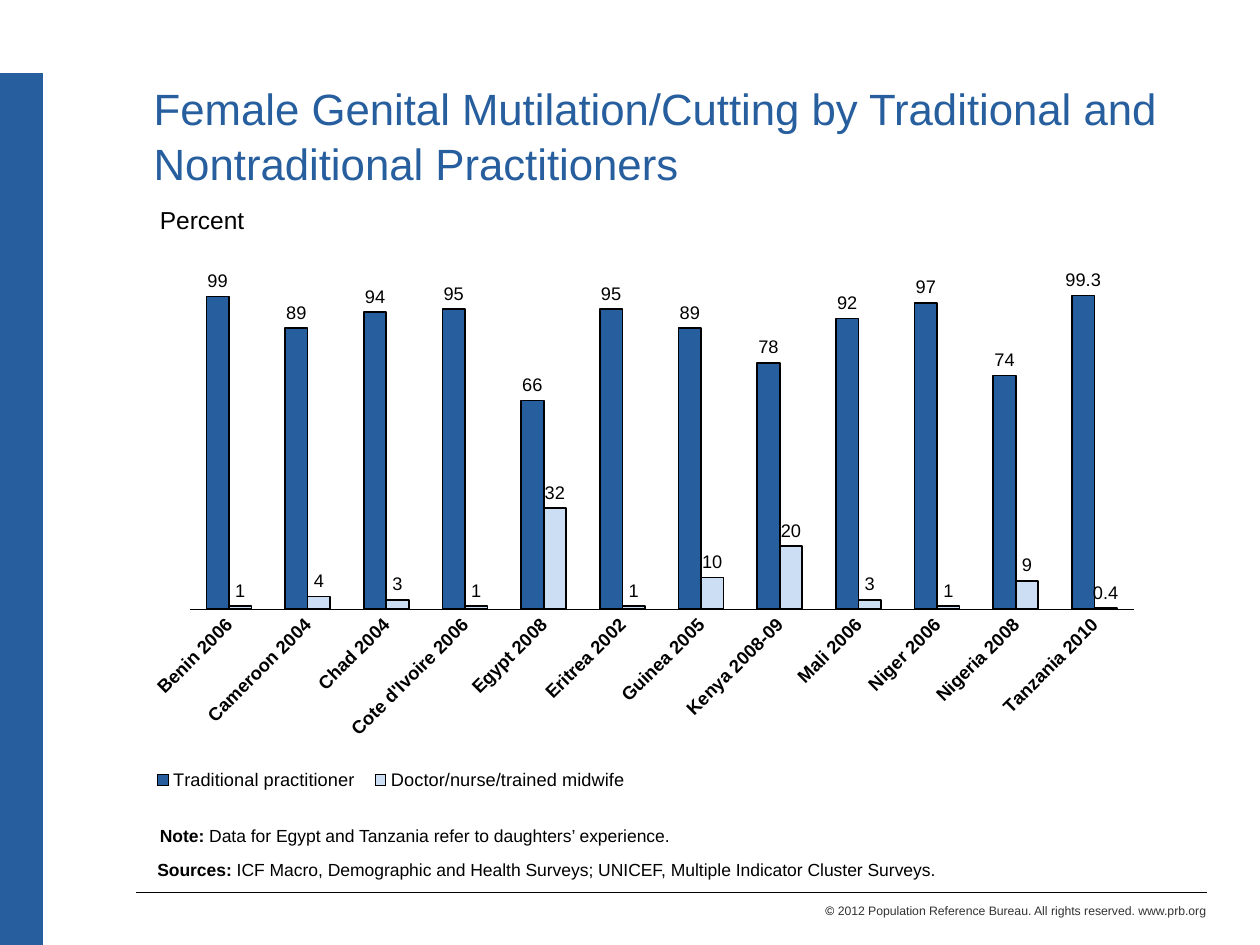
from dataclasses import dataclass

from lxml import etree
from pptx import Presentation
from pptx.chart import data as chart_data
from pptx.dml import color
from pptx.enum import chart as charts, shapes, text
from pptx.oxml import ns
from pptx.util import Inches, Pt

BLUE, PALE_BLUE, BLACK, GRAY = "265E9E", "CCDEF3", "000000", "333333"
COUNTRIES = ["Benin 2006", "Cameroon 2004", "Chad 2004", "Cote d'Ivoire 2006", "Egypt 2008", "Eritrea 2002",
             "Guinea 2005", "Kenya 2008-09", "Mali 2006", "Niger 2006", "Nigeria 2008", "Tanzania 2010"]


@dataclass
class Practitioner:
    name: str
    values: list
    fill: str


@dataclass
class Rule:
    start: tuple
    end: tuple
    fill: str
    width: float


@dataclass
class Label:
    box: tuple
    runs: list
    size: float
    align: text.PP_ALIGN = text.PP_ALIGN.LEFT


PRACTITIONERS = [
    Practitioner("Traditional practitioner", [99, 89, 94, 95, 66, 95, 89, 78, 92, 97, 74, 99.3], BLUE),
    Practitioner("Doctor/nurse/trained midwife", [1, 4, 3, 1, 32, 1, 10, 20, 3, 1, 9, 0.4], PALE_BLUE),
]
RULES = [
    Rule((0.17, 0.58), (0.17, 7.5), BLUE, 25),
    Rule((1.08, 7.08), (9.58, 7.08), BLACK, 0.5),
]
LABELS = [
    Label((4.25, 7.12, 5.42, 0.22),
          [("© ", False, BLACK),
           ("2012 Population Reference Bureau. All rights reserved. www.prb.org", False, GRAY)],
          7, text.PP_ALIGN.RIGHT),
    Label((1.17, 1.58, 8.5, 0.33), [("Percent", False, BLACK)], 14),
    Label((1.15, 6.77, 8.42, 0.27),
          [("Sources: ", True, BLACK),
           ("ICF Macro, Demographic and Health Surveys; UNICEF, Multiple Indicator Cluster Surveys.", False, BLACK)],
          10),
    Label((1.17, 6.5, 7.75, 0.27),
          [("Note:", True, BLACK),
           (" Data for Egypt and Tanzania refer to daughters’ experience.", False, BLACK)],
          10),
]


def rgb(value: str) -> color.RGBColor:
    """Turn a hex string into a colour."""
    return color.RGBColor.from_string(value)


def style_font(font, size: float, fill: str = BLACK, bold: bool = False) -> None:
    """Set typeface, size, weight and colour."""
    font.name, font.size, font.bold = "Arial", Pt(size), bold
    font.color.rgb = rgb(fill)


def style_line(line, fill: str, width: float) -> None:
    """Set a solid line colour and its width in points."""
    line.color.rgb = rgb(fill)
    line.width = Pt(width)


def add_rule(slide, rule: Rule) -> None:
    """Draw a straight line without a shadow."""
    points = [Inches(value) for value in rule.start + rule.end]
    connector = slide.shapes.add_connector(shapes.MSO_CONNECTOR.STRAIGHT, *points)
    style_line(connector.line, rule.fill, rule.width)
    etree.SubElement(connector._element.spPr, ns.qn("a:effectLst"))


def add_label(slide, label: Label) -> None:
    """Add a wrapped one-paragraph text box."""
    shape = slide.shapes.add_textbox(*[Inches(value) for value in label.box])
    shape.text_frame.word_wrap = True
    paragraph = shape.text_frame.paragraphs[0]
    paragraph.alignment = label.align
    for words, bold, fill in label.runs:
        run = paragraph.add_run()
        run.text = words
        style_font(run.font, label.size, fill, bold)


def add_title(slide, words: str) -> None:
    """Place and format the title placeholder."""
    title = slide.shapes.title
    title.left, title.top, title.width, title.height = [Inches(value) for value in (1.12, 0.58, 8.46, 1.08)]
    frame = title.text_frame
    frame.text = words
    frame.word_wrap = True
    frame.auto_size = text.MSO_AUTO_SIZE.NONE
    frame.vertical_anchor = text.MSO_ANCHOR.TOP
    paragraph = frame.paragraphs[0]
    paragraph.alignment = text.PP_ALIGN.LEFT
    paragraph.line_spacing = 1.05
    style_font(paragraph.runs[0].font, 25, BLUE)


def set_layout(element, position: int, box: tuple, inner: bool = False) -> None:
    """Give a chart part a manual layout in fractions of the chart."""
    for previous in element.findall(ns.qn("c:layout")):
        element.remove(previous)
    layout = etree.Element(ns.qn("c:layout"))
    manual = etree.SubElement(layout, ns.qn("c:manualLayout"))
    settings = [("layoutTarget", "inner")] if inner else []
    settings += [("xMode", "edge"), ("yMode", "edge"), *zip("xywh", box)]
    for name, value in settings:
        etree.SubElement(manual, ns.qn(f"c:{name}")).set("val", str(value))
    element.insert(position, layout)


def add_practitioner_chart(slide) -> None:
    """Add the clustered columns by country and practitioner."""
    data = chart_data.CategoryChartData()
    data.categories = COUNTRIES
    for practitioner in PRACTITIONERS:
        data.add_series(practitioner.name, practitioner.values)
    box = [Inches(value) for value in (0.89, 1.72, 8.2, 4.61)]
    chart = slide.shapes.add_chart(charts.XL_CHART_TYPE.COLUMN_CLUSTERED, *box, data).chart
    style_font(chart.font, 13.2, bold=True)
    chart.has_title = False

    plot = chart.plots[0]
    plot.gap_width, plot.overlap, plot.vary_by_categories = 150, 0, False
    for series, practitioner in zip(plot.series, PRACTITIONERS):
        series.format.fill.solid()
        series.format.fill.fore_color.rgb = rgb(practitioner.fill)
        style_line(series.format.line, BLACK, 0.94)
        labels = series.data_labels
        labels.show_value = True
        labels.position = charts.XL_LABEL_POSITION.OUTSIDE_END
        style_font(labels.font, 10.4)

    values = chart.value_axis
    values.minimum_scale, values.maximum_scale = 0, 120
    values.has_major_gridlines = values.visible = False
    countries = chart.category_axis
    countries.major_tick_mark = charts.XL_TICK_MARK.NONE
    style_line(countries.format.line, BLACK, 0.25)
    style_font(countries.tick_labels.font, 10.5, bold=True)
    countries._element.find(ns.qn("c:txPr")).find(ns.qn("a:bodyPr")).set("rot", "-2700000")

    chart.has_legend = True
    legend = chart.legend
    legend.position = charts.XL_LEGEND_POSITION.BOTTOM
    legend.include_in_layout = False
    style_font(legend.font, 10.4)
    set_layout(legend._element, 1, (0.03, 0.945, 0.48, 0.05))
    plot_area = chart._chartSpace.chart.plotArea
    set_layout(plot_area, 0, (0.075, 0.023, 0.914, 0.653), inner=True)


def main() -> None:
    """Build and save the slide."""
    presentation = Presentation()
    presentation.slide_width, presentation.slide_height = Inches(10), Inches(7.5)
    slide = presentation.slides.add_slide(presentation.slide_layouts[5])
    for rule in RULES:
        add_rule(slide, rule)
    add_title(slide, "Female Genital Mutilation/Cutting by Traditional and Nontraditional Practitioners")
    add_practitioner_chart(slide)
    for label in LABELS:
        add_label(slide, label)
    presentation.save("out.pptx")


if __name__ == "__main__":
    main()
